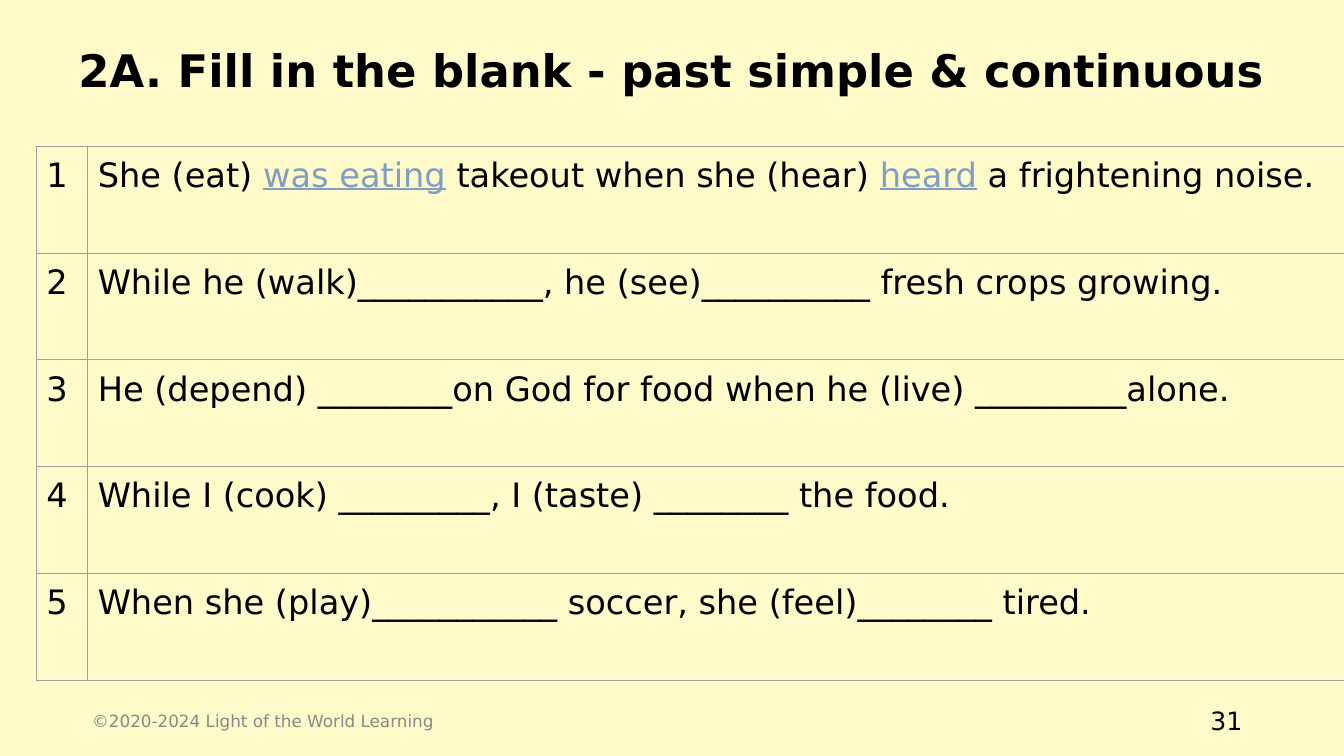
from dataclasses import dataclass

import pptx
import pptx.dml.color
import pptx.enum.text
import pptx.oxml
import pptx.oxml.ns
import pptx.util

Inches = pptx.util.Inches
Pt = pptx.util.Pt
RGBColor = pptx.dml.color.RGBColor
Align = pptx.enum.text.PP_ALIGN
Anchor = pptx.enum.text.MSO_ANCHOR

FONT = "DejaVu Sans"
CREAM = RGBColor(0xFE, 0xFA, 0xC9)
BLACK = RGBColor(0x00, 0x00, 0x00)
GRAY = RGBColor(0x88, 0x88, 0x88)
BLUE = RGBColor(0x80, 0x9E, 0xC2)
BORDER = RGBColor(0x9E, 0x9E, 0x9E)


@dataclass
class Span:
    text: str
    answer: bool = False


@dataclass
class Label:
    text: str
    left: float
    top: float
    width: float
    height: float
    size: int
    color: RGBColor = BLACK
    bold: bool = False
    align: Align = Align.LEFT
    line_spacing: float = 1.0


LABELS = [
    Label("2A. Fill in the blank - past simple & continuous", 0.68, 0, 12.65, 1.45,
          32, bold=True, line_spacing=0.9),
    Label("©2020-2024 Light of the World Learning", 0.36, 6.95, 4.5, 0.4,
          12, color=GRAY, align=Align.CENTER),
    Label("31", 9.42, 6.95, 3, 0.4, 18, align=Align.RIGHT),
]

SENTENCES = [
    [Span("She (eat) "), Span("was eating", answer=True),
     Span(" takeout when she (hear) "), Span("heard", answer=True),
     Span(" a frightening noise.")],
    [Span("While he (walk)___________, he (see)__________ fresh crops growing.")],
    [Span("He (depend) ________on God for food when he (live) _________alone.")],
    [Span("While I (cook) _________, I (taste) ________ the food.")],
    [Span("When she (play)___________ soccer, she (feel)________ tired.")],
]

COLUMN_WIDTHS = [0.51, 12.47]
ROW_HEIGHT = 1.06


def add_span(para, text: str, *, size: int, color: RGBColor = BLACK,
             bold: bool = False, underline: bool = False) -> None:
    span = para.add_run()
    span.text = text
    font = span.font
    font.name = FONT
    font.size = Pt(size)
    font.color.rgb = color
    font.bold = bold
    font.underline = underline


def add_label(page, label: Label) -> None:
    box = page.shapes.add_textbox(Inches(label.left), Inches(label.top),
                                  Inches(label.width), Inches(label.height))
    frame = box.text_frame
    frame.word_wrap = True
    frame.vertical_anchor = Anchor.MIDDLE
    para = frame.paragraphs[0]
    para.alignment = label.align
    para.line_spacing = label.line_spacing
    add_span(para, label.text, size=label.size, color=label.color, bold=label.bold)


def set_borders(cell, color: RGBColor, width: float) -> None:
    properties = cell._tc.get_or_add_tcPr()
    for position, side in enumerate(("lnL", "lnR", "lnT", "lnB")):
        line = pptx.oxml.parse_xml(
            f'<a:{side} {pptx.oxml.ns.nsdecls("a")} w="{Pt(width)}">'
            f'<a:solidFill><a:srgbClr val="{color}"/></a:solidFill></a:{side}>')
        properties.insert(position, line)


def fill_cell(cell, spans: list[Span]) -> None:
    cell.fill.background()
    cell.margin_left = cell.margin_right = Inches(0.1)
    cell.margin_top = cell.margin_bottom = Inches(0.1)
    set_borders(cell, BORDER, 0.75)
    para = cell.text_frame.paragraphs[0]
    for span in spans:
        add_span(para, span.text, size=24, color=BLUE if span.answer else BLACK,
                 underline=span.answer)


def add_exercise(page) -> None:
    frame = page.shapes.add_table(
        len(SENTENCES), len(COLUMN_WIDTHS), Inches(0.36), Inches(1.45),
        Inches(sum(COLUMN_WIDTHS)), Inches(ROW_HEIGHT * len(SENTENCES)))
    table = frame.table
    table.first_row = False
    table.horz_banding = False
    for column, width in zip(table.columns, COLUMN_WIDTHS):
        column.width = Inches(width)
    for index, sentence in enumerate(SENTENCES):
        table.rows[index].height = Inches(ROW_HEIGHT)
        fill_cell(table.cell(index, 0), [Span(str(index + 1))])
        fill_cell(table.cell(index, 1), sentence)


def main() -> None:
    deck = pptx.Presentation()
    deck.slide_width = Inches(13.33)
    deck.slide_height = Inches(7.5)
    page = deck.slides.add_slide(deck.slide_layouts[6])
    page.background.fill.solid()
    page.background.fill.fore_color.rgb = CREAM

    # Title, copyright line and page number
    for label in LABELS:
        add_label(page, label)

    # Numbered sentences
    add_exercise(page)
    deck.save("out.pptx")


if __name__ == "__main__":
    main()
